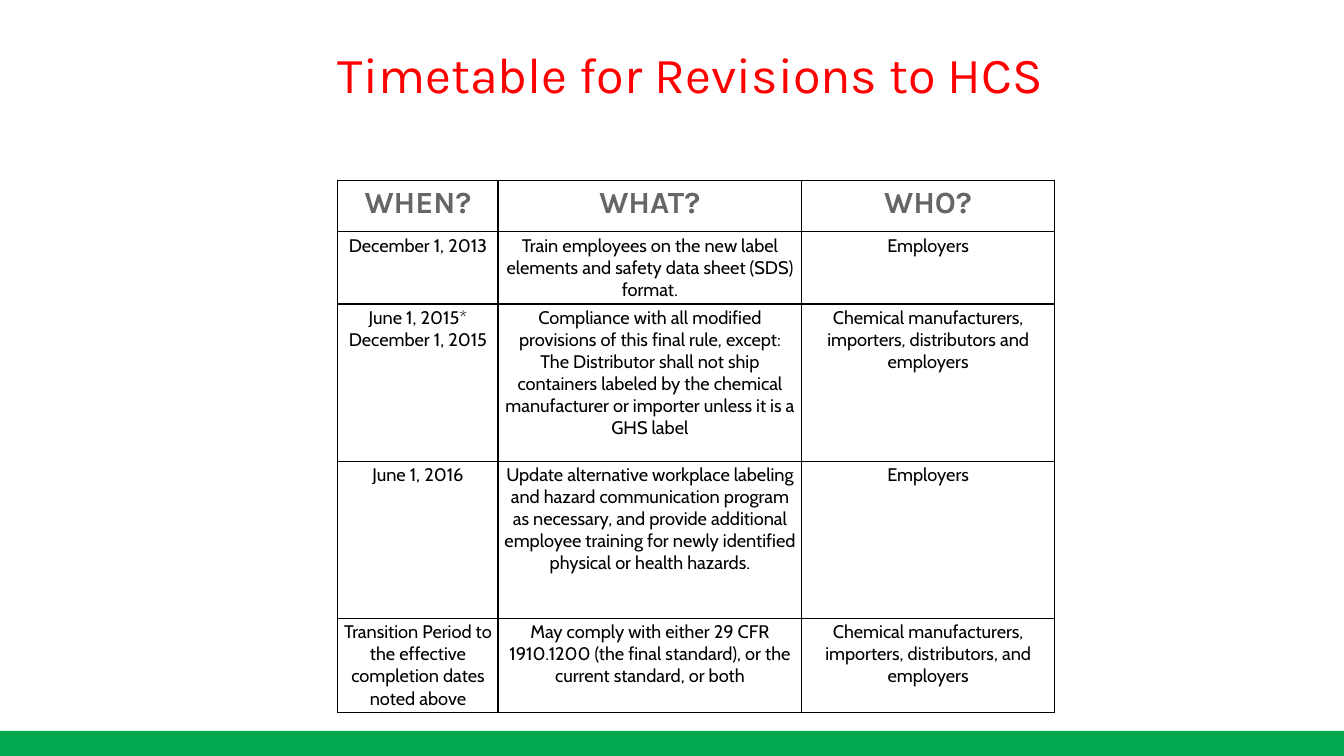
"""Build the timetable slide for revisions to the HCS."""
from lxml import etree
from pptx import Presentation
from pptx.dml.color import RGBColor
from pptx.enum.shapes import MSO_SHAPE
from pptx.enum.text import MSO_ANCHOR, PP_ALIGN
from pptx.oxml.ns import qn
from pptx.util import Inches, Pt

TITLE = "Timetable for Revisions to HCS"
HEADINGS = ["WHEN?", "WHAT?", "WHO?"]
ROWS = [
    (
        ["December 1, 2013"],
        ["Train employees on the new label elements and safety data sheet (SDS) format."],
        ["Employers"],
    ),
    (
        ["June 1, 2015*", "December 1, 2015"],
        [
            "Compliance with all modified provisions of this final rule, except:",
            "The Distributor shall not ship containers labeled by the chemical "
            "manufacturer or importer unless it is a GHS label",
        ],
        ["Chemical manufacturers, importers, distributors and employers"],
    ),
    (
        ["June 1, 2016"],
        [
            "Update alternative workplace labeling and hazard communication program "
            "as necessary, and provide additional employee training for newly "
            "identified physical or health hazards."
        ],
        ["Employers"],
    ),
    (
        ["Transition Period to the effective completion dates noted above"],
        [
            "May comply with either 29 CFR 1910.1200 (the final standard), "
            "or the current standard, or both"
        ],
        ["Chemical manufacturers, importers, distributors, and employers"],
    ),
]
COLUMN_WIDTHS = [1.59, 3.01, 2.51]
ROW_HEIGHTS = [0.51, 0.71, 1.56, 1.56, 0.92]
TABLE_LEFT, TABLE_TOP = 3.35, 1.79
SLIDE_WIDTH, SLIDE_HEIGHT, BAND_HEIGHT = 13.33, 7.5, 0.25

RED = RGBColor(0xFF, 0x00, 0x00)
GREEN = RGBColor(0x00, 0xA8, 0x50)
GRAY = RGBColor(0x66, 0x66, 0x66)
BLACK = RGBColor(0x00, 0x00, 0x00)
CENTER = PP_ALIGN.CENTER
TOP = MSO_ANCHOR.TOP
RECTANGLE = MSO_SHAPE.RECTANGLE


def write_text(text_frame, lines, font_name, size, color, bold=False):
    """Write centred lines, one paragraph each."""
    for index, line in enumerate(lines):
        paragraph = text_frame.add_paragraph() if index else text_frame.paragraphs[0]
        paragraph.alignment = CENTER
        run = paragraph.add_run()
        run.text = line
        run.font.name = font_name
        run.font.size = Pt(size)
        run.font.color.rgb = color
        run.font.bold = bold


def set_borders(cell):
    """Draw a thin black line on each side of a cell."""
    properties = cell._tc.get_or_add_tcPr()
    for index, side in enumerate(("a:lnL", "a:lnR", "a:lnT", "a:lnB")):
        line = etree.Element(qn(side), w=str(Pt(1)))
        fill = etree.SubElement(line, qn("a:solidFill"))
        etree.SubElement(fill, qn("a:srgbClr"), val=str(BLACK))
        properties.insert(index, line)


def add_band(slide):
    """Add the green band along the bottom edge."""
    band = slide.shapes.add_shape(
        RECTANGLE, 0, Inches(SLIDE_HEIGHT - BAND_HEIGHT),
        Inches(SLIDE_WIDTH), Inches(BAND_HEIGHT),
    )
    band.shadow.inherit = False
    band.fill.solid()
    band.fill.fore_color.rgb = GREEN
    band.line.fill.background()


def add_title(slide):
    """Place and fill the title."""
    title = slide.shapes.title
    title.left, title.top = Inches(2.64), Inches(0.38)
    title.width, title.height = Inches(8.42), Inches(0.71)
    title.text_frame.vertical_anchor = TOP
    title.text_frame.word_wrap = True
    write_text(title.text_frame, [TITLE], "Karla", 36, RED)


def add_timetable(slide):
    """Add the table of dates, duties and parties."""
    table = slide.shapes.add_table(
        len(ROW_HEIGHTS), len(COLUMN_WIDTHS), Inches(TABLE_LEFT), Inches(TABLE_TOP),
        Inches(sum(COLUMN_WIDTHS)), Inches(sum(ROW_HEIGHTS)),
    ).table
    table.horz_banding = False
    for column, width in zip(table.columns, COLUMN_WIDTHS):
        column.width = Inches(width)
    for row, height in zip(table.rows, ROW_HEIGHTS):
        row.height = Inches(height)

    contents = [[[heading] for heading in HEADINGS], *ROWS]
    for row_index, (row, entries) in enumerate(zip(table.rows, contents)):
        is_header = row_index == 0
        for cell, lines in zip(row.cells, entries):
            cell.fill.background()
            set_borders(cell)
            cell.vertical_anchor = TOP
            cell.margin_left = cell.margin_right = Inches(0.1 if is_header else 0.03)
            cell.margin_top = cell.margin_bottom = Inches(0.05 if is_header else 0.03)
            if is_header:
                write_text(cell.text_frame, lines, "Karla", 22, GRAY, True)
            else:
                write_text(cell.text_frame, lines, "Cabin", 13, BLACK)


def main():
    """Create and save the presentation."""
    presentation = Presentation()
    presentation.slide_width = Inches(SLIDE_WIDTH)
    presentation.slide_height = Inches(SLIDE_HEIGHT)
    slide = presentation.slides.add_slide(presentation.slide_layouts[5])
    add_band(slide)
    add_timetable(slide)
    add_title(slide)
    presentation.save("out.pptx")


if __name__ == "__main__":
    main()
